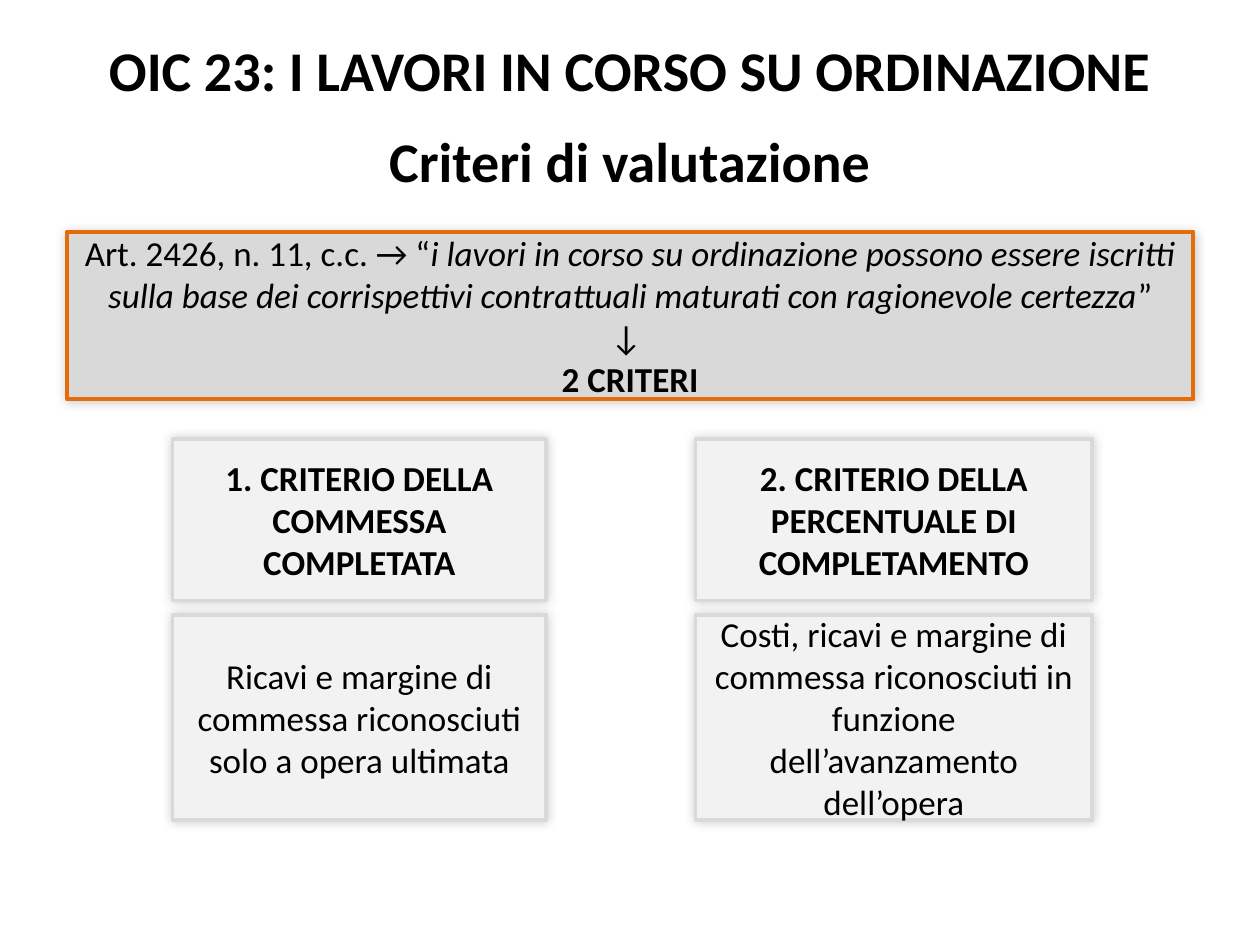
from dataclasses import dataclass

from lxml.etree import SubElement
from pptx import Presentation
from pptx.dml.color import RGBColor
from pptx.enum.shapes import MSO_SHAPE
from pptx.enum.text import MSO_ANCHOR, PP_ALIGN
from pptx.oxml.ns import qn
from pptx.util import Cm, Pt


@dataclass(frozen=True)
class Theme:
    font: str = "Calibri"
    text: RGBColor = RGBColor(0x00, 0x00, 0x00)
    article_fill: RGBColor = RGBColor(0xD9, 0xD9, 0xD9)
    article_line: RGBColor = RGBColor(0xE4, 0x6C, 0x0A)
    criterion_fill: RGBColor = RGBColor(0xF2, 0xF2, 0xF2)
    criterion_line: RGBColor = RGBColor(0xD9, 0xD9, 0xD9)
    title_size: Pt = Pt(32)
    body_size: Pt = Pt(20)
    title_gap: Pt = Pt(13.4)


def set_values(target, values):
    for name, value in values.items():
        setattr(target, name, value)


def add_soft_shadow(shape):
    shape.shadow.inherit = False
    effects = shape._element.spPr.find(qn("a:effectLst"))
    shadow = SubElement(effects, qn("a:outerShdw"), blurRad=str(Pt(6)),
                        dist="0", dir=str(225 * 60000), rotWithShape="0")
    color = SubElement(shadow, qn("a:srgbClr"), val="000000")
    SubElement(color, qn("a:alpha"), val="20000")


class SlideBuilder:
    def __init__(self, slide, theme):
        self.slide = slide
        self.theme = theme

    def add_text(self, shape, paragraphs, size, gap=Pt(0)):
        """Fill the shape with paragraphs, each a list of (text, font values)."""
        frame = shape.text_frame
        set_values(frame, {"word_wrap": True, "vertical_anchor": MSO_ANCHOR.MIDDLE})
        base = {"name": self.theme.font, "size": size}
        for index, runs in enumerate(paragraphs):
            paragraph = frame.add_paragraph() if index else frame.paragraphs[0]
            paragraph.alignment = PP_ALIGN.CENTER
            if index:
                paragraph.space_before = gap
            for text, values in runs:
                run = paragraph.add_run()
                run.text = text
                set_values(run.font, base | values)
                run.font.color.rgb = self.theme.text

    def title(self, box, lines):
        shape = self.slide.shapes.add_textbox(*map(Cm, box))
        paragraphs = [[(line, {"bold": True})] for line in lines]
        self.add_text(shape, paragraphs, self.theme.title_size, self.theme.title_gap)

    def panel(self, box, paragraphs, fill, line, line_width):
        shape = self.slide.shapes.add_shape(MSO_SHAPE.RECTANGLE, *map(Cm, box))
        add_soft_shadow(shape)
        shape.fill.solid()
        shape.fill.fore_color.rgb = fill
        shape.line.color.rgb = line
        shape.line.width = Pt(line_width)
        self.add_text(shape, paragraphs, self.theme.body_size)

    def article(self, box, paragraphs):
        self.panel(box, paragraphs, self.theme.article_fill, self.theme.article_line, 2.25)

    def criterion(self, box, text, bold):
        self.panel(box, [[(text, {"bold": bold})]],
                   self.theme.criterion_fill, self.theme.criterion_line, 2)


def main():
    presentation = Presentation()
    set_values(presentation, {"slide_width": Cm(25.4), "slide_height": Cm(19.05)})
    slide = presentation.slides.add_slide(presentation.slide_layouts[6])
    builder = SlideBuilder(slide, Theme())

    builder.article((1.35, 4.67, 22.71, 3.38), [
        [("Art. 2426, n. 11, c.c. → “", {}),
         ("i lavori in corso su ordinazione possono essere iscritti sulla base dei "
          "corrispettivi contrattuali maturati con ragionevole certezza", {"italic": True}),
         ("”", {})],
        [("↓ ", {})],
        [("2 CRITERI", {"bold": True})],
    ])

    columns = [
        (3.48, 7.53, "1. CRITERIO DELLA COMMESSA COMPLETATA",
         "Ricavi e margine di commessa riconosciuti solo a opera ultimata"),
        (14.02, 8, "2. CRITERIO DELLA PERCENTUALE DI COMPLETAMENTO",
         "Costi, ricavi e margine di commessa riconosciuti in funzione "
         "dell’avanzamento dell’opera"),
    ]
    for left, width, heading, description in columns:
        builder.criterion((left, 8.85, width, 3.26), heading, bold=True)
        builder.criterion((left, 12.4, width, 4.13), description, bold=False)

    builder.title((0, 1.55, 25.4, 1.52),
                  ["OIC 23: I LAVORI IN CORSO SU ORDINAZIONE", "Criteri di valutazione"])
    presentation.save("out.pptx")


if __name__ == "__main__":
    main()
